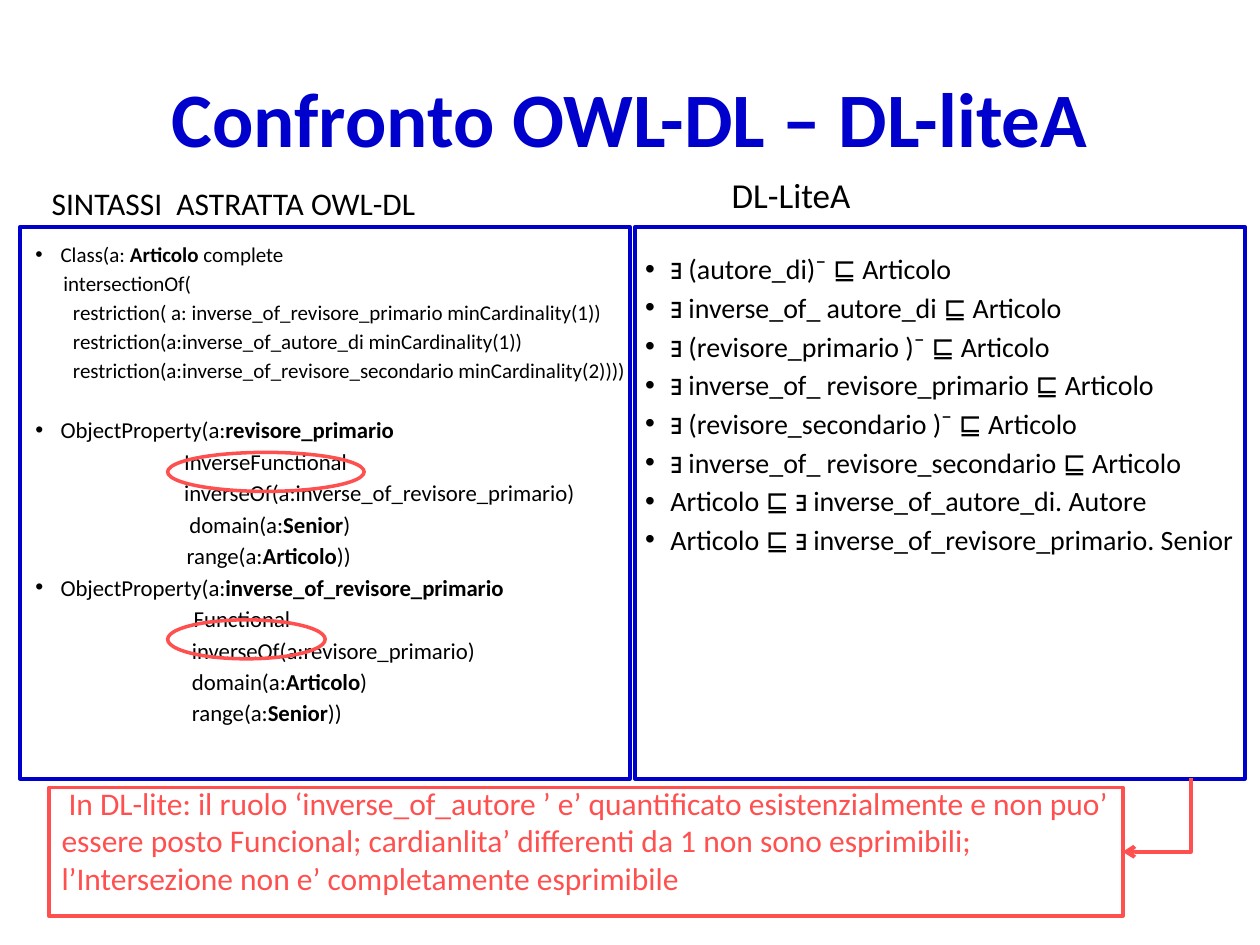
import dataclasses

import pptx
import pptx.dml.color
import pptx.enum.shapes
import pptx.enum.text
import pptx.oxml
import pptx.oxml.ns
import pptx.util

Pt = pptx.util.Pt
SHAPES = pptx.enum.shapes.MSO_SHAPE
ANCHOR = pptx.enum.text.MSO_ANCHOR
ALIGN = pptx.enum.text.PP_ALIGN


@dataclasses.dataclass(frozen=True)
class Theme:
    font: str = "Calibri"
    symbol_font: str = "Arial"
    blue: str = "0000CC"
    red: str = "FF5050"
    black: str = "000000"
    title: int = 44
    heading: int = 20
    label: int = 18
    axiom: int = 16
    property: int = 13
    class_: int = 12
    border: float = 2.25
    ring: float = 2
    spacing: float = 0.18  # space before a list line, as a share of its size


@dataclasses.dataclass(frozen=True)
class Box:
    left: float
    top: float
    width: float
    height: float

    def inner(self, left, top, width, height):
        return Box(self.left + left, self.top + top, width, height)

    def lengths(self):
        return [Pt(value) for value in (self.left, self.top, self.width, self.height)]


THEME = Theme()
BULLET_MARGIN, BULLET_INDENT = 27.4, -14.4

# Size, left margin (None for a bulleted line), text with *bold* parts
OWL_LINES = [
    (THEME.class_, None, "Class(a: *Articolo* complete"),
    (THEME.class_, 29, "intersectionOf("),
    (THEME.class_, 34.5, "restriction( a: inverse_of_revisore_primario minCardinality(1))"),
    (THEME.class_, 34.5, "restriction(a:inverse_of_autore_di minCardinality(1))"),
    (THEME.class_, 34.5, "restriction(a:inverse_of_revisore_secondario minCardinality(2))))"),
    (THEME.property, None, "ObjectProperty(a:*revisore_primario*"),
    (THEME.property, 98, "InverseFunctional"),
    (THEME.property, 98, "inverseOf(a:inverse_of_revisore_primario)"),
    (THEME.property, 101, "domain(a:*Senior*)"),
    (THEME.property, 99.5, "range(a:*Articolo*))"),
    (THEME.property, None, "ObjectProperty(a:*inverse_of_revisore_primario*"),
    (THEME.property, 103.5, "Functional"),
    (THEME.property, 102.5, "inverseOf(a:revisore_primario)"),
    (THEME.property, 102.5, "domain(a:*Articolo*)"),
    (THEME.property, 102.5, "range(a:*Senior*))"),
]
CLASS_GAP = 19  # sets the class apart from the properties

AXIOMS = [
    "∃ (autore_di)¯ ⊑ Articolo",
    "∃ inverse_of_ autore_di ⊑ Articolo",
    "∃ (revisore_primario )¯ ⊑ Articolo",
    "∃ inverse_of_ revisore_primario ⊑ Articolo",
    "∃ (revisore_secondario )¯ ⊑ Articolo",
    "∃ inverse_of_ revisore_secondario ⊑ Articolo",
    "Articolo ⊑ ∃ inverse_of_autore_di. Autore",
    "Articolo ⊑ ∃ inverse_of_revisore_primario. Senior",
]
NOTE = (
    "In DL-lite: il ruolo ‘inverse_of_autore ’ e’ quantificato esistenzialmente "
    "e non puo’ essere posto Funcional; cardianlita’ differenti da 1 non sono "
    "esprimibili; l’Intersezione non e’ completamente esprimibile"
)


def color(value):
    return pptx.dml.color.RGBColor.from_string(value)


def prepare(shape, box, anchor=ANCHOR.TOP, wrap=True):
    """Place a text shape and return its frame."""
    shape.left, shape.top, shape.width, shape.height = box.lengths()
    frame = shape.text_frame
    frame.auto_size = pptx.enum.text.MSO_AUTO_SIZE.NONE
    frame.word_wrap = wrap
    frame.vertical_anchor = anchor
    return frame


def write(frame, text, *, size, tint=THEME.black, bold=False, align=ALIGN.LEFT,
          margin=0, indent=0, bullet=False, before=0):
    """Add one paragraph; *stars* mark bold parts and ∃ takes the symbol font."""
    first = frame.paragraphs[0]
    paragraph = frame.add_paragraph() if first.runs else first
    paragraph.alignment = align
    paragraph.space_before = Pt(before)
    properties = paragraph._p.get_or_add_pPr()
    properties.set("marL", str(Pt(margin)))
    properties.set("indent", str(Pt(indent)))
    mark = pptx.oxml.ns.qn("a:buChar" if bullet else "a:buNone")
    element = properties.makeelement(mark, {"char": "•"} if bullet else {})
    properties.append(element)
    for number, part in enumerate(text.split("*")):
        before_symbol, symbol, after_symbol = part.partition("∃")
        for piece in (before_symbol, symbol, after_symbol):
            if piece:
                run = paragraph.add_run()
                run.text = piece
                run.font.name = THEME.symbol_font if piece == "∃" else THEME.font
                run.font.size = Pt(size)
                run.font.bold = bold or number % 2 == 1
                run.font.color.rgb = color(tint)


def add_outline(slide, kind, box, tint, weight):
    shape = slide.shapes.add_shape(kind, *box.lengths())
    shape.shadow.inherit = False
    shape.fill.background()
    shape.line.color.rgb = color(tint)
    shape.line.width = Pt(weight)


def add_title(slide, box):
    frame = prepare(slide.shapes.title, box, ANCHOR.MIDDLE)
    write(frame, "Confronto OWL-DL – DL-liteA", size=THEME.title, tint=THEME.blue,
          bold=True, align=ALIGN.CENTER)


def add_owl_panel(slide, box):
    heading = prepare(slide.placeholders[1], box.inner(10.8, -28, 232.6, 29), wrap=False)
    write(heading, "SINTASSI  ASTRATTA OWL-DL", size=THEME.label)
    body = prepare(slide.placeholders[2], box.inner(-box.left, 5, 826.6, 311))
    previous = THEME.class_
    for size, margin, text in OWL_LINES:
        bullet = margin is None
        write(body, text, size=size, bullet=bullet,
              margin=BULLET_MARGIN if bullet else margin,
              indent=BULLET_INDENT if bullet else 0,
              before=size * THEME.spacing if size == previous else CLASS_GAP)
        previous = size
    add_outline(slide, SHAPES.RECTANGLE, box, THEME.blue, THEME.border)
    # Rings around the two functional properties
    for top, width in ((128.9, 112.3), (224.6, 90)):
        add_outline(slide, SHAPES.OVAL, box.inner(84.3, top, width, 22.3),
                    THEME.red, THEME.ring)


def add_dl_lite_panel(slide, box):
    heading = prepare(slide.placeholders[3], box.inner(2.9, -28, 318.2, 25.2), ANCHOR.BOTTOM)
    write(heading, "DL-LiteA", size=THEME.heading, margin=45,
          before=THEME.heading * THEME.spacing)
    body = prepare(slide.placeholders[4], box.inner(-14.4, 10.8, 382.3, 288.7))
    for axiom in AXIOMS:
        write(body, axiom, size=THEME.axiom, bullet=True, margin=BULLET_MARGIN,
              indent=BULLET_INDENT, before=THEME.axiom * THEME.spacing)
    add_outline(slide, SHAPES.RECTANGLE, box, THEME.blue, THEME.border)


def add_note(slide, box):
    add_outline(slide, SHAPES.RECTANGLE, box, THEME.red, THEME.border)
    text_box = box.inner(0, -5.8, 624.2, 72.7)
    frame = prepare(slide.shapes.add_textbox(*text_box.lengths()), text_box)
    write(frame, NOTE, size=THEME.label, tint=THEME.red, indent=4)


def add_note_arrow(slide, box):
    """Bent arrow from the top right of the box to its bottom left."""
    # A quarter turn swaps width and height about the same centre
    left = box.left + (box.width - box.height) / 2
    top = box.top + (box.height - box.width) / 2
    arrow = slide.shapes.add_connector(
        pptx.enum.shapes.MSO_CONNECTOR.ELBOW, Pt(left), Pt(top),
        Pt(left + box.height), Pt(top + box.width))
    arrow.line.color.rgb = color(THEME.red)
    arrow.line.width = Pt(THEME.border)
    properties = arrow._element.spPr
    properties.find(pptx.oxml.ns.qn("a:xfrm")).set("rot", "5400000")
    properties.find(pptx.oxml.ns.qn("a:prstGeom")).set("prst", "bentConnector2")
    line = arrow.line._get_or_add_ln()
    line.append(line.makeelement(pptx.oxml.ns.qn("a:tailEnd"), {"type": "arrow"}))
    properties.append(properties.makeelement(pptx.oxml.ns.qn("a:effectLst"), {}))


def main():
    presentation = pptx.Presentation()
    presentation.slide_width, presentation.slide_height = Pt(720), Pt(540)
    comparison = presentation.slide_layouts[4]
    slide = presentation.slides.add_slide(comparison)
    add_title(slide, Box(36, 21.6, 648, 90))
    add_owl_panel(slide, Box(11.5, 129.6, 348.5, 315.4))
    add_dl_lite_panel(slide, Box(362.9, 129.6, 348.5, 315.4))
    add_note(slide, Box(28.1, 450, 613.4, 73.4))
    add_note_arrow(slide, Box(641.5, 444.5, 39, 42.2))
    presentation.save("out.pptx")


if __name__ == "__main__":
    main()
